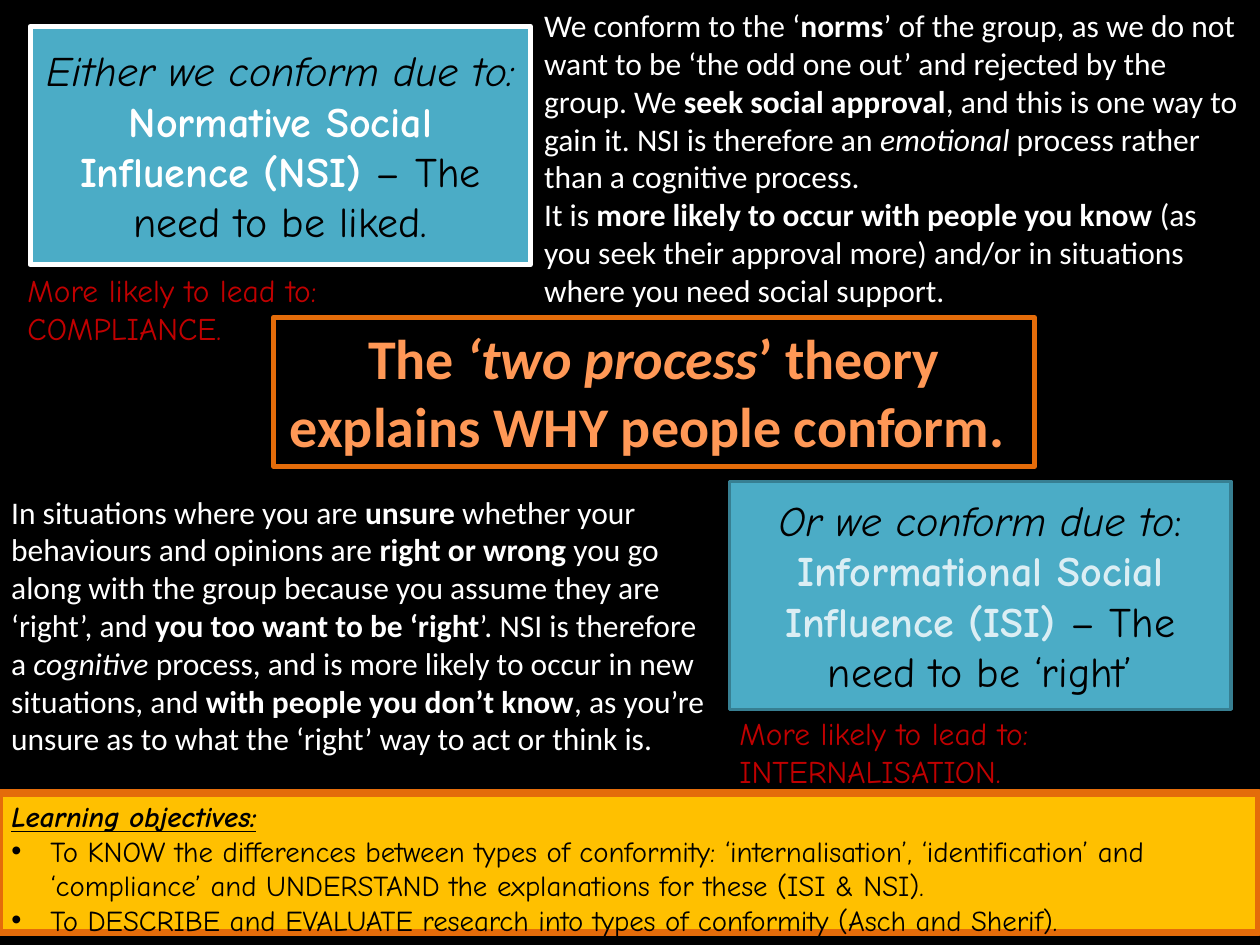
from pptx import Presentation
from pptx.dml.color import RGBColor
from pptx.enum.shapes import MSO_SHAPE
from pptx.enum.text import MSO_ANCHOR, MSO_AUTO_SIZE, PP_ALIGN
from pptx.oxml import parse_xml
from pptx.oxml.ns import nsdecls
from pptx.util import Inches, Pt

WIDTH, HEIGHT = Inches(10), Inches(7.5)
BLACK, WHITE, ORANGE, TEAL = "000000", "FFFFFF", "E46C0A", "4BACC6"
BOLD, ITALIC = {"bold": True}, {"italic": True}
HEADING_LOOK = {"name": "Calibri", "size": Pt(32), "bold": True, "ink": "FF9856"}
REASON_LOOK = {"name": "Comic Neue", "size": Pt(24), "ink": BLACK}
DETAIL_LOOK = {"name": "Calibri", "size": Pt(18), "ink": WHITE}
OUTCOME_LOOK = {"name": "Comic Neue", "size": Pt(18), "ink": "C00000"}
OBJECTIVE_LOOK = {"name": "Comic Neue", "size": Pt(16.5), "ink": BLACK}

HEADING = [[("The ", {}), ("‘two process", ITALIC),
            ("’ theory explains WHY people conform. ", {})]]
NORMATIVE = [[("Either we conform due to: ", ITALIC),
              ("Normative Social Influence (NSI) ", {"bold": True, "ink": WHITE}),
              ("– The need to be liked.", {})]]
INFORMATIONAL = [[("Or we conform due to", ITALIC), (": ", {}),
                  ("Informational Social Influence (ISI) ", {"bold": True, "ink": "DBEEF4"}),
                  ("– The need to be ‘right’", {})]]
NORMATIVE_DETAIL = [
    [("We conform to the ‘", {}), ("norms", BOLD),
     ("’ of the group, as we do not want to be ‘the odd one out’ and rejected by the group. We ", {}),
     ("seek social approval", BOLD),
     (", and this is one way to gain it. NSI is therefore an ", {}),
     ("emotional", ITALIC), (" process rather than a cognitive process.", {})],
    [("It is ", {}), ("more likely to occur with people you know ", BOLD),
     ("(as you seek their approval more) and/or in situations where you need social support.", {})],
]
INFORMATIONAL_DETAIL = [
    [("In situations where you are ", {}), ("unsure", BOLD),
     (" whether your behaviours and opinions are ", {}), ("right or wrong ", BOLD),
     ("you go along with the group because you assume they are ‘right’, and ", {}),
     ("you too want to be ‘right", BOLD), ("’. NSI is therefore a ", {}),
     ("cognitive", ITALIC),
     (" process, and is more likely to occur in new situations, and ", {}),
     ("with people you don’t know", BOLD),
     (", as you’re unsure as to what the ‘right’ way to act or think is.", {})],
]
OBJECTIVES = [
    [("Learning objectives:", {"bold": True, "italic": True, "underline": True})],
    [("To KNOW the differences between types of conformity: ‘internalisation’, ‘identification’ "
      "and ‘compliance’ and UNDERSTAND the explanations for these (ISI & NSI).", {})],
    [("To DESCRIBE and EVALUATE research into types of conformity (Asch and Sherif).", {})],
]


def color(hex_string):
    return RGBColor.from_string(hex_string)


def area(left, top, width, height):
    return [round(share / 100 * side) for share, side in
            zip((left, top, width, height), (WIDTH, HEIGHT) * 2)]


def place(element, shares):
    for side, length in zip(("left", "top", "width", "height"), area(*shares)):
        setattr(element, side, length)


def apply_format(font, look):
    for key, value in look.items():
        if key == "ink":
            font.color.rgb = color(value)
        else:
            setattr(font, key, value)


def write(element, paragraphs, look, align=PP_ALIGN.LEFT,
          anchor=MSO_ANCHOR.TOP, fit=MSO_AUTO_SIZE.SHAPE_TO_FIT_TEXT):
    frame = element.text_frame
    settings = {"word_wrap": True, "vertical_anchor": anchor, "auto_size": fit}
    for key, value in settings.items():
        setattr(frame, key, value)
    for index, pieces in enumerate(paragraphs):
        paragraph = frame.add_paragraph() if index else frame.paragraphs[0]
        paragraph.alignment = align
        paragraph.space_before = Pt(0)
        for words, emphasis in pieces:
            run = paragraph.add_run()
            run.text = words
            apply_format(run.font, look | emphasis)


def outline(element, line_color, weight, fill=None):
    if fill:
        element.fill.solid()
        element.fill.fore_color.rgb = color(fill)
    element.line.color.rgb = color(line_color)
    element.line.width = Pt(weight)


def add_heading(slide):
    heading = slide.shapes.title
    place(heading, (21.7, 33.6, 60.4, 15.73))
    outline(heading, ORANGE, 3)
    write(heading, HEADING, HEADING_LOOK, PP_ALIGN.CENTER)


def add_objectives(slide):
    objectives = slide.placeholders[1]
    place(objectives, (-0.1, 83.87, 100, 16.13))
    outline(objectives, ORANGE, 4.5, "FFC000")
    write(objectives, OBJECTIVES, OBJECTIVE_LOOK)
    for index, paragraph in enumerate(objectives.text_frame.paragraphs):
        hanging = Inches(0.31) if index else 0
        bullet = 'buChar {} char="•"' if index else "buNone {}"
        properties = paragraph._p.get_or_add_pPr()
        properties.set("marL", str(hanging))
        properties.set("indent", str(-hanging))
        properties.append(parse_xml(f"<a:{bullet.format(nsdecls('a'))}/>"))


def add_reason(slide, shares, paragraphs, line_color, weight):
    reason = slide.shapes.add_shape(MSO_SHAPE.RECTANGLE, *area(*shares))
    reason.shadow.inherit = False
    outline(reason, line_color, weight, TEAL)
    write(reason, paragraphs, REASON_LOOK, PP_ALIGN.CENTER,
          MSO_ANCHOR.MIDDLE, MSO_AUTO_SIZE.NONE)


def add_text(slide, shares, paragraphs, look):
    write(slide.shapes.add_textbox(*area(*shares)), paragraphs, look)


def add_outcome(slide, left, top, outcome):
    add_text(slide, (left, top, 41, 9.47),
             [[(f"More likely to lead to: {outcome}.", {})]], OUTCOME_LOOK)


def main():
    deck = Presentation()
    deck.slide_width, deck.slide_height = WIDTH, HEIGHT
    slide = deck.slides.add_slide(deck.slide_layouts[1])
    slide.background.fill.solid()
    slide.background.fill.fore_color.rgb = color(BLACK)
    add_objectives(slide)
    add_heading(slide)
    add_reason(slide, (57.9, 50.93, 39.8, 24.13), INFORMATIONAL, "377F92", 2)
    add_reason(slide, (2.4, 2.8, 39.7, 25.2), NORMATIVE, WHITE, 3)
    add_text(slide, (42.2, 0, 57.8, 33.6), NORMATIVE_DETAIL, DETAIL_LOOK)
    add_text(slide, (-0.1, 51.47, 57.9, 29.6), INFORMATIONAL_DETAIL, DETAIL_LOOK)
    add_outcome(slide, 1.2, 28, "COMPLIANCE")
    add_outcome(slide, 57.7, 74.93, "INTERNALISATION")
    deck.save("out.pptx")


if __name__ == "__main__":
    main()
